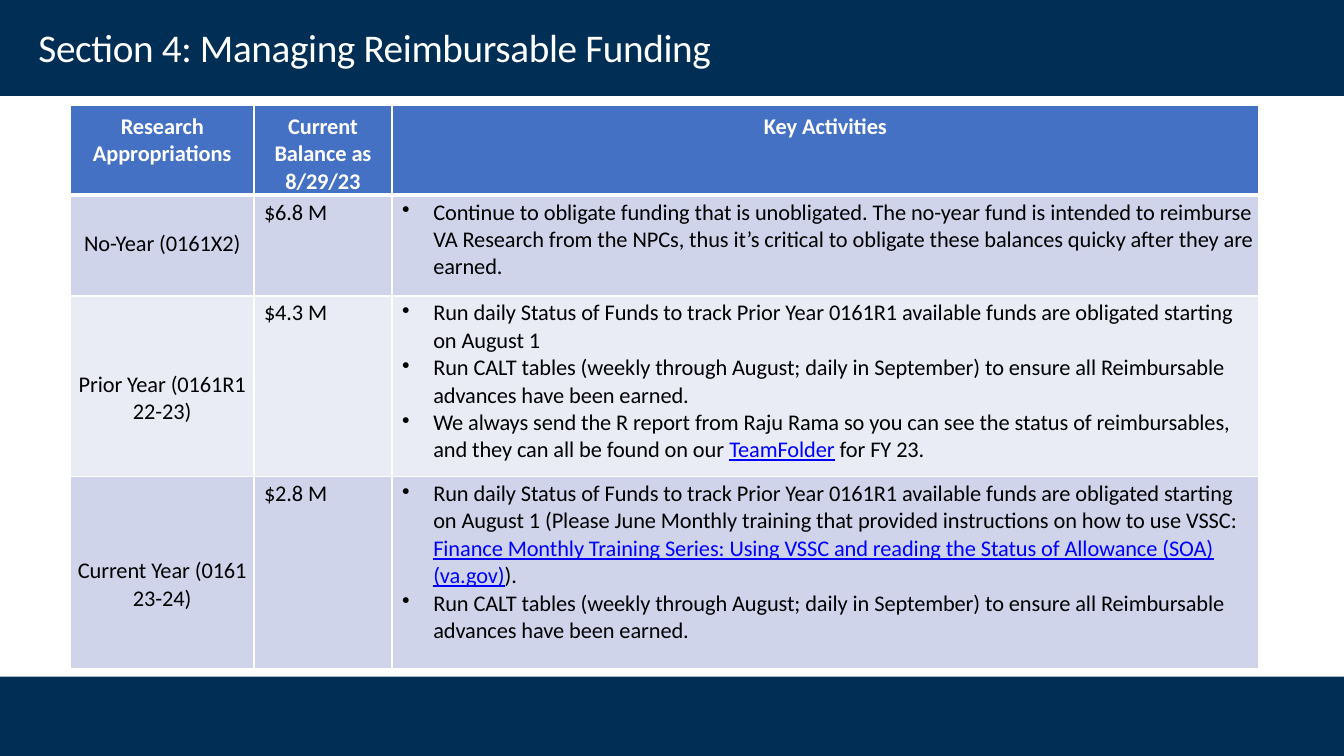
from lxml.etree import SubElement
from pptx import Presentation
from pptx.dml.color import RGBColor
from pptx.enum.shapes import MSO_SHAPE as Shape
from pptx.enum.text import MSO_ANCHOR as Anchor, PP_ALIGN as Align
from pptx.oxml.ns import qn
from pptx.util import Pt

NAVY = RGBColor(0x00, 0x2E, 0x55)
HEADER_BLUE = RGBColor(0x44, 0x71, 0xC4)
BAND_DARK = RGBColor(0xCF, 0xD4, 0xEA)
BAND_LIGHT = RGBColor(0xE9, 0xEB, 0xF5)
LINK_BLUE = RGBColor(0x00, 0x00, 0xFF)
WHITE = RGBColor(0xFF, 0xFF, 0xFF)
BLACK = RGBColor(0x00, 0x00, 0x00)

FONT = "Calibri"
SLIDE_W, SLIDE_H = 960, 540
HEADINGS = ["Research Appropriations", "Current Balance as 8/29/23", "Key Activities"]
COLUMN_WIDTHS = [131, 98.6, 619.3]
HEADER_HEIGHT = 64

DAILY_RUN = ("Run daily Status of Funds to track Prior Year 0161R1 available funds "
             "are obligated starting on August 1")
CALT_RUN = ("Run CALT tables (weekly through August; daily in September) to ensure all "
            "Reimbursable advances have been earned.")

# name, space above name, balance, activities, row height, fill;
# in an activity every second piece of text is a link
FUNDS = [
    ("No-Year (0161X2)", 25.3, "$6.8 M", [
        ["Continue to obligate funding that is unobligated. The no-year fund is intended "
         "to reimburse VA Research from the NPCs, thus it’s critical to obligate these "
         "balances quicky after they are earned."],
    ], 72, BAND_DARK),
    ("Prior Year (0161R1 22-23)", 53.8, "$4.3 M", [
        [DAILY_RUN],
        [CALT_RUN],
        ["We always send the R report from Raju Rama so you can see the status of "
         "reimbursables, and they can all be found on our ", "TeamFolder", " for FY 23."],
    ], 129, BAND_LIGHT),
    ("Current Year (0161 23-24)", 57.9, "$2.8 M", [
        [DAILY_RUN + " (Please June Monthly training that provided instructions on how "
         "to use VSSC: ",
         "Finance Monthly Training Series: Using VSSC and reading the Status of "
         "Allowance (SOA) (va.gov)", ")."],
        [CALT_RUN],
    ], 137, BAND_DARK),
]


def add_text(paragraph, text, size=16, color=BLACK, bold=False, underline=False,
             align=Align.LEFT, spacing=-0.05):
    paragraph.alignment = align
    run = paragraph.add_run()
    run.text = text
    font = run.font
    font.name, font.size, font.bold, font.underline = FONT, Pt(size), bold, underline
    font.color.rgb = color
    run._r.get_or_add_rPr().set("spc", str(round(spacing * 100)))


def add_bullet(paragraph, left=29.5, hanging=22.3):
    props = paragraph._p.get_or_add_pPr()
    props.set("marL", str(Pt(left)))
    props.set("indent", str(-Pt(hanging)))
    SubElement(props, qn("a:buChar")).set("char", "•")


def style_cell(cell, fill, top_margin, left_margin=0, top_line=1, bottom_line=1):
    cell.margin_left, cell.margin_top = Pt(left_margin), Pt(top_margin)
    cell.margin_right = cell.margin_bottom = 0
    cell.vertical_anchor = Anchor.TOP
    props = cell._tc.get_or_add_tcPr()
    for side, width in (("L", 1), ("R", 1), ("T", top_line), ("B", bottom_line)):
        line = SubElement(props, qn(f"a:ln{side}"), w=str(Pt(width)))
        line_fill = SubElement(line, qn("a:solidFill"))
        SubElement(line_fill, qn("a:srgbClr"), val=str(WHITE))
    cell.fill.solid()
    cell.fill.fore_color.rgb = fill


def add_band(slide, left, top, width, height):
    band = slide.shapes.add_shape(Shape.RECTANGLE, Pt(left), Pt(top), Pt(width), Pt(height))
    band.shadow.inherit = False
    band.fill.solid()
    band.fill.fore_color.rgb = NAVY
    band.line.fill.background()


def add_title(slide, left, top, width, height):
    title = slide.shapes.title
    title.left, title.top, title.width, title.height = map(Pt, (left, top, width, height))
    frame = title.text_frame
    frame.margin_left, frame.margin_top = Pt(16), Pt(4.5)
    frame.margin_right = frame.margin_bottom = 0
    frame.vertical_anchor = Anchor.TOP
    frame.word_wrap = True
    add_text(frame.paragraphs[0], "Section 4: Managing Reimbursable Funding",
             size=28, color=WHITE, spacing=-0.25)
    slide.shapes._spTree.append(title._element)  # in front of the band


def fill_activities(frame, activities):
    for index, pieces in enumerate(activities):
        paragraph = frame.add_paragraph() if index else frame.paragraphs[0]
        add_bullet(paragraph)
        for position, piece in enumerate(pieces):
            is_link = position % 2 == 1
            add_text(paragraph, piece, underline=is_link,
                     color=LINK_BLUE if is_link else BLACK)


def add_funding_table(slide, left, top):
    row_heights = [HEADER_HEIGHT] + [fund[4] for fund in FUNDS]
    table = slide.shapes.add_table(
        len(row_heights), len(COLUMN_WIDTHS), Pt(left), Pt(top),
        Pt(sum(COLUMN_WIDTHS)), Pt(sum(row_heights))).table
    table.horz_banding = False
    for column, width in zip(table.columns, COLUMN_WIDTHS):
        column.width = Pt(width)
    for row, height in zip(table.rows, row_heights):
        row.height = Pt(height)

    for cell, heading in zip(table.rows[0].cells, HEADINGS):
        style_cell(cell, HEADER_BLUE, top_margin=5.7, bottom_line=3)
        add_text(cell.text_frame.paragraphs[0], heading, color=WHITE, bold=True,
                 align=Align.CENTER)

    for number, (name, space_above, balance, activities, _, fill) in enumerate(FUNDS, 1):
        name_cell, balance_cell, activity_cell = table.rows[number].cells
        top_line = 3 if number == 1 else 1
        style_cell(name_cell, fill, space_above, top_line=top_line)
        style_cell(balance_cell, fill, 2.6, left_margin=7.2, top_line=top_line)
        style_cell(activity_cell, fill, 2.6, top_line=top_line)
        add_text(name_cell.text_frame.paragraphs[0], name, align=Align.CENTER)
        add_text(balance_cell.text_frame.paragraphs[0], balance)
        fill_activities(activity_cell.text_frame, activities)


def main():
    deck = Presentation()
    deck.slide_width, deck.slide_height = Pt(SLIDE_W), Pt(SLIDE_H)
    slide = deck.slides.add_slide(deck.slide_layouts[5])
    add_band(slide, 0, 0, SLIDE_W, 68.6)
    add_band(slide, 0, 483.3, SLIDE_W, SLIDE_H - 483.3)
    add_title(slide, 11.5, 12.2, 916, 38)
    add_funding_table(slide, 50.4, 75)
    deck.save("out.pptx")


if __name__ == "__main__":
    main()
